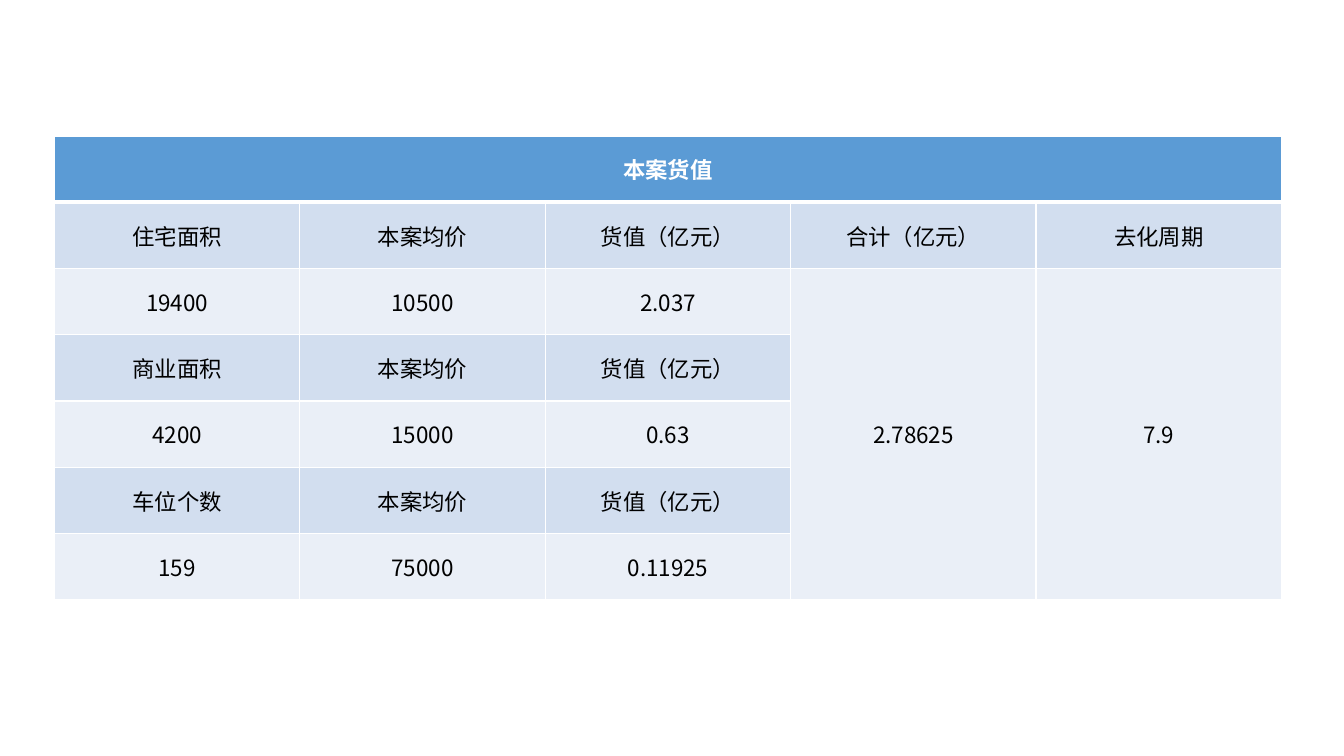
from lxml import etree
from pptx import Presentation
from pptx.dml.color import RGBColor
from pptx.enum.text import MSO_ANCHOR, PP_ALIGN
from pptx.oxml.ns import qn
from pptx.util import Inches, Pt

CENTER = PP_ALIGN.CENTER
MIDDLE = MSO_ANCHOR.MIDDLE
FONT = "Noto Sans CJK SC"
WHITE, BLACK = "FFFFFF", "000000"
HEADER_BLUE, LABEL_BLUE, VALUE_BLUE = "5B9BD5", "D2DEEF", "EAEFF7"

ROWS = [
    ["本案货值"],
    ["住宅面积", "本案均价", "货值（亿元）", "合计（亿元）", "去化周期"],
    ["19400", "10500", "2.037", "2.78625", "7.9"],
    ["商业面积", "本案均价", "货值（亿元）"],
    ["4200", "15000", "0.63"],
    ["车位个数", "本案均价", "货值（亿元）"],
    ["159", "75000", "0.11925"],
]
MERGES = [((0, 0), (0, 4)), ((2, 3), (6, 3)), ((2, 4), (6, 4))]


def rgb(value):
    return RGBColor.from_string(value)


def set_borders(cell, **widths):
    """Draw white borders; widths are points keyed by L, R, T and B."""
    tcPr = cell._tc.get_or_add_tcPr()
    for side in "LRTB":
        ln = etree.SubElement(tcPr, qn(f"a:ln{side}"), w=str(Pt(widths.get(side, 1))))
        fill = etree.SubElement(ln, qn("a:solidFill"))
        etree.SubElement(fill, qn("a:srgbClr"), val=WHITE)


def set_fill(cell, color):
    cell.fill.solid()
    cell.fill.fore_color.rgb = rgb(color)


def write_cell(cell, text, color, bold):
    cell.vertical_anchor = MIDDLE
    p = cell.text_frame.paragraphs[0]
    p.alignment = CENTER
    r = p.add_run()
    r.text = text
    r.font.size = Pt(16)
    r.font.bold = bold
    r.font.color.rgb = rgb(color)
    r.font.name = FONT
    etree.SubElement(r._r.get_or_add_rPr(), qn("a:ea"), typeface=FONT)


def row_fill(row):
    if row == 0:
        return HEADER_BLUE
    return LABEL_BLUE if row % 2 else VALUE_BLUE


def add_value_table(s):
    table = s.shapes.add_table(
        len(ROWS), 5, Inches(0.54), Inches(1.35), Inches(12.17), Inches(4.6)
    ).table
    for first, last in MERGES:
        table.cell(*first).merge(table.cell(*last))
    for i, row in enumerate(table.rows):
        # The thick rule lies on the edge shared by the first two rows.
        widths = {0: {"B": 3}, 1: {"T": 3}}.get(i, {})
        for cell in row.cells:
            set_borders(cell, **widths)
            set_fill(cell, row_fill(i))
        for cell, text in zip(row.cells, ROWS[i]):
            write_cell(cell, text, BLACK if i else WHITE, i == 0)


def main():
    prs = Presentation()
    prs.slide_width, prs.slide_height = Inches(13.33), Inches(7.5)
    s = prs.slides.add_slide(prs.slide_layouts[6])
    add_value_table(s)
    prs.save("out.pptx")


if __name__ == "__main__":
    main()
